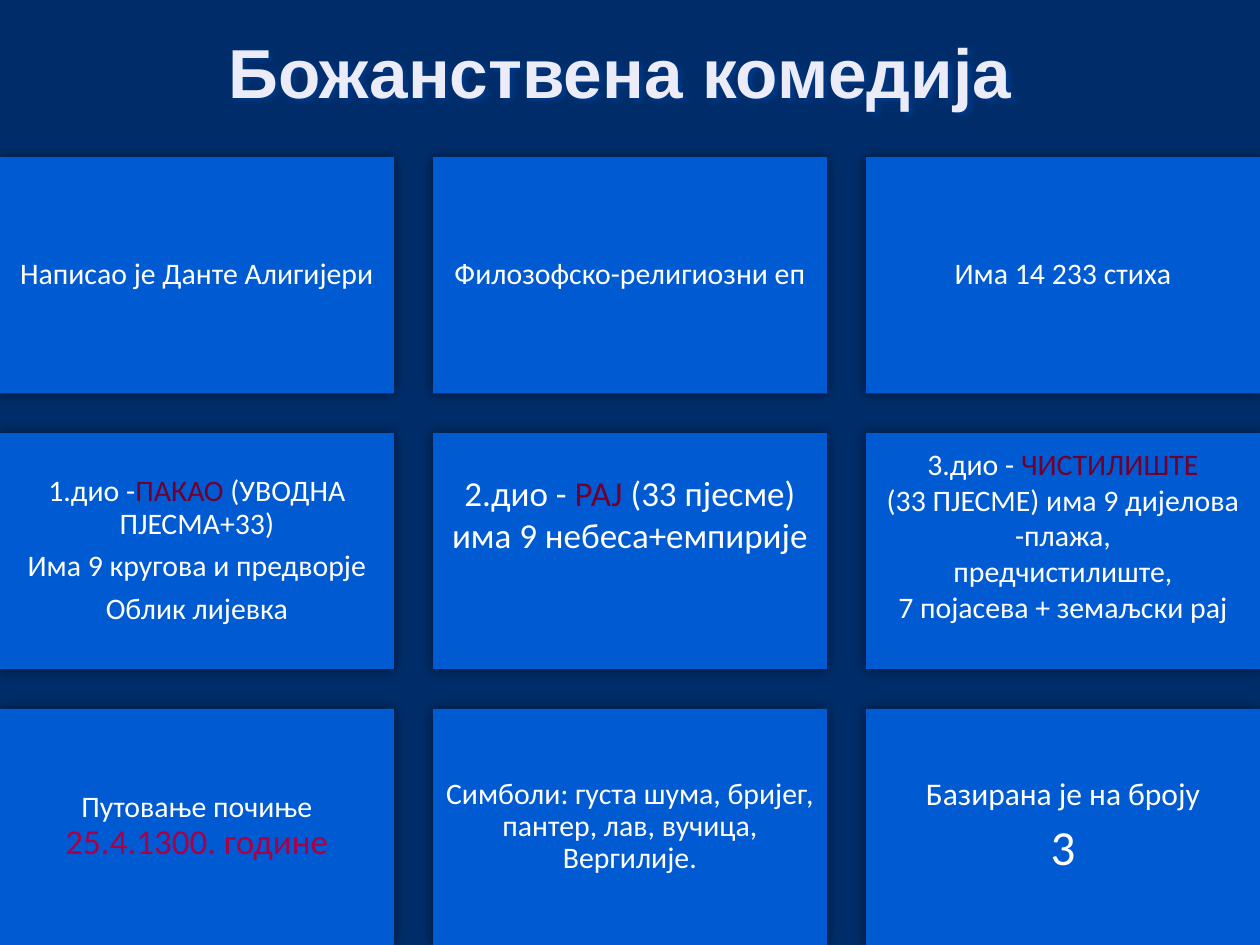
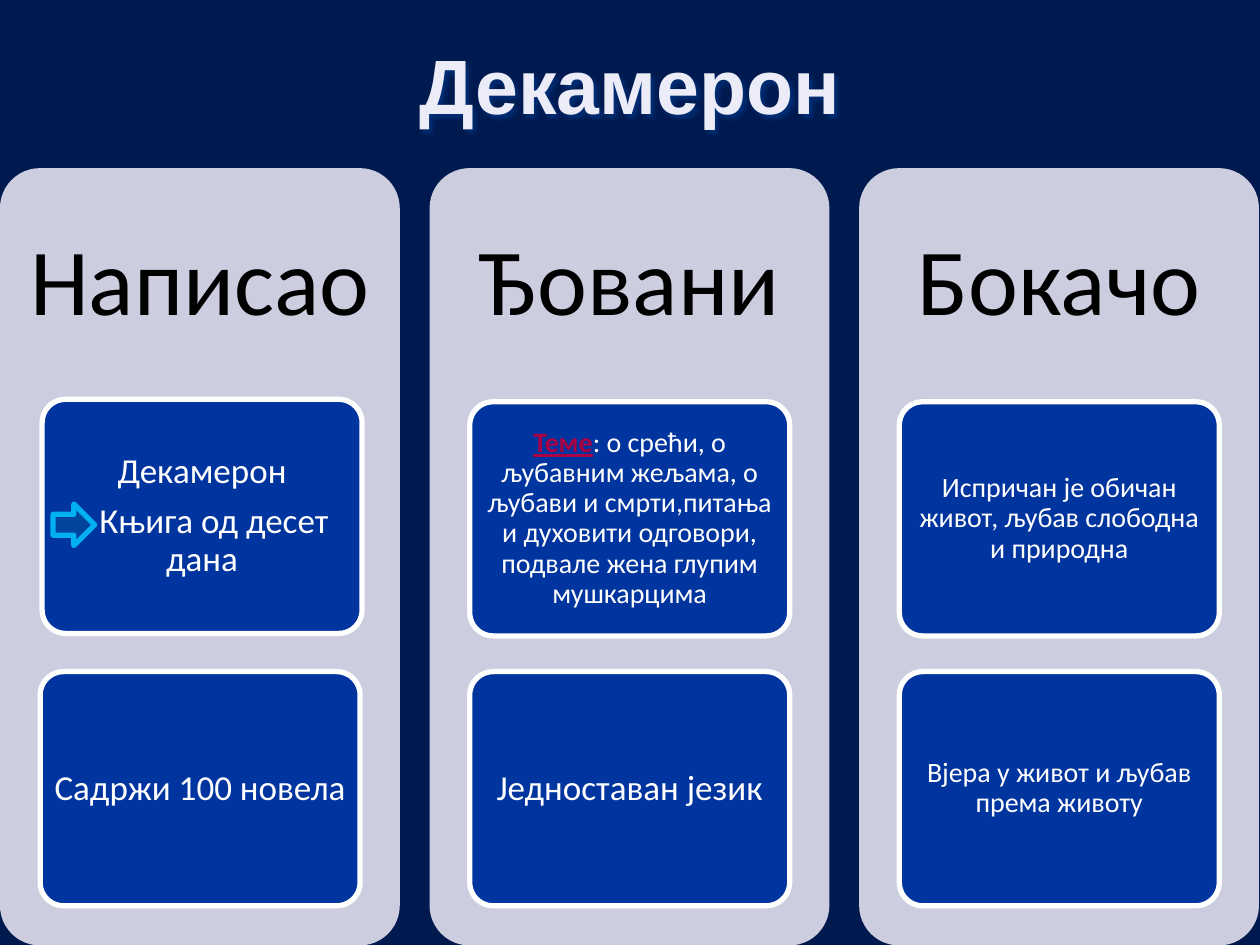
"""Build two slides on the Divine Comedy and the Decameron."""
from dataclasses import dataclass
from typing import NamedTuple, Optional

from lxml.etree import SubElement
from pptx import Presentation
from pptx.dml.color import RGBColor
from pptx.enum.shapes import MSO_SHAPE
from pptx.enum.text import MSO_ANCHOR, MSO_AUTO_SIZE, PP_ALIGN
from pptx.oxml.ns import qn
from pptx.util import Cm, Pt


@dataclass(frozen=True)
class Theme:
    comedy_bg: str = "002D6A"
    decameron_bg: str = "001A4F"
    title: str = "EBECF7"
    title_outline: str = "002675"
    title_shadow: str = "0043A0"
    card: str = "005BD3"
    panel: str = "CCCEDF"
    tile: str = "00349E"
    arrow: str = "00449E"
    arrow_line: str = "00B0F0"
    white: str = "FFFFFF"
    black: str = "000000"
    wine: str = "72002C"
    crimson: str = "AB0043"
    title_font: str = "Arial"
    body_font: str = "Calibri"
    comedy_title: float = 39.6
    decameron_title: float = 44
    heading: float = 54
    number: float = 28
    large: float = 20
    medium: float = 18
    normal: float = 17
    small: float = 16
    line: float = 3


class Bit(NamedTuple):
    text: str
    color: Optional[str] = None
    size: Optional[float] = None
    accent: bool = False


class Deck:
    def __init__(self, theme):
        self.theme = theme
        self.prs = Presentation()
        self.prs.slide_width, self.prs.slide_height = Cm(25.4), Cm(19.05)
        self.s = None

    def slide(self, bg):
        self.s = self.prs.slides.add_slide(self.prs.slide_layouts[5])
        fill = self.s.background.fill
        fill.solid()
        fill.fore_color.rgb = RGBColor.from_string(bg)

    def shadow(self, sp, color, blur, dist=0):
        sp.shadow.inherit = False
        effects = sp.element.spPr.find(qn("a:effectLst"))
        outer = SubElement(effects, qn("a:outerShdw"), blurRad=str(Pt(blur)),
                           dist=str(Pt(dist)), dir="2700000", rotWithShape="0")
        clr = SubElement(outer, qn("a:srgbClr"), val=color)
        SubElement(clr, qn("a:alpha"), val="50000")

    def title(self, text, left, top, height, size):
        sp = self.s.shapes.title
        sp.left, sp.top, sp.width, sp.height = Cm(left), Cm(top), Cm(22.86), Cm(height)
        tf = sp.text_frame
        tf.text = text
        tf.auto_size = MSO_AUTO_SIZE.NONE
        tf.vertical_anchor = MSO_ANCHOR.MIDDLE
        p = tf.paragraphs[0]
        p.alignment = PP_ALIGN.CENTER
        r = p.runs[0]
        self.font(r, self.theme.title_font, size, self.theme.title, bold=True)
        props = r._r.get_or_add_rPr()
        ln = SubElement(props, qn("a:ln"), w=str(Pt(2.48)))
        fill = SubElement(ln, qn("a:solidFill"))
        SubElement(fill, qn("a:srgbClr"), val=self.theme.title_outline)
        props.insert(0, ln)
        self.shadow(sp, self.theme.title_shadow, 3, 1.5)

    def font(self, r, name, size, color, bold=False, underline=False):
        f = r.font
        f.name, f.size, f.bold, f.underline = name, Pt(size), bold, underline
        f.color.rgb = RGBColor.from_string(color)

    def shape(self, kind, left, top, width, height, fill, line=None):
        sp = self.s.shapes.add_shape(kind, Cm(left), Cm(top), Cm(width), Cm(height))
        sp.shadow.inherit = False
        sp.fill.solid()
        sp.fill.fore_color.rgb = RGBColor.from_string(fill)
        if line:
            sp.line.color.rgb = RGBColor.from_string(line)
            sp.line.width = Pt(self.theme.line)
        else:
            sp.line.fill.background()
        if kind == MSO_SHAPE.ROUNDED_RECTANGLE:
            sp.adjustments[0] = 0.1
        return sp

    def text(self, sp, paragraphs, size, color, inset, bottom=0, tight=True):
        tf = sp.text_frame
        tf.word_wrap = True
        tf.vertical_anchor = MSO_ANCHOR.MIDDLE
        tf.margin_left = tf.margin_right = tf.margin_top = Cm(inset)
        tf.margin_bottom = Cm(inset + bottom)
        for i, bits in enumerate(paragraphs):
            p = tf.add_paragraph() if i else tf.paragraphs[0]
            p.alignment = PP_ALIGN.CENTER
            if tight:
                p.line_spacing = 0.9
                p.space_after = Pt(round(size * 0.35))
            for bit in bits:
                r = p.add_run()
                r.text = bit.text
                self.font(r, self.theme.body_font, bit.size or size,
                          bit.color or color, bit.accent, bit.accent)
        return tf

    def card(self, col, row, paragraphs, size, bottom=0, tight=True):
        sp = self.shape(MSO_SHAPE.RECTANGLE, col * 8.73, 3.17 + row * 5.56,
                        7.94, 4.76, self.theme.card)
        self.shadow(sp, self.theme.black, 7.5)
        self.text(sp, paragraphs, size, self.theme.white, 0.18, bottom, tight)

    def panel(self, col, heading):
        sp = self.shape(MSO_SHAPE.ROUNDED_RECTANGLE, col * 8.66, 3.39,
                        8.06, 15.67, self.theme.panel)
        self.text(sp, [[Bit(heading)]], self.theme.heading, self.theme.black, 0.35, 10.97)

    def tile(self, col, row, paragraphs, size, dx=0, dy=0):
        sp = self.shape(MSO_SHAPE.ROUNDED_RECTANGLE, col * 8.66 + 0.81 + dx,
                        8.1 + row * 5.44 + dy, 6.45, 4.72,
                        self.theme.tile, self.theme.white)
        return self.text(sp, paragraphs, size, self.theme.white, 0.12)


def comedy(deck):
    t = deck.theme
    deck.slide(t.comedy_bg)
    deck.title("Божанствена комедија", 1.07, 0.43, 1.98, t.comedy_title)
    cards = [
        ([[Bit("Написао је Данте Алигијери")]], t.normal),
        ([[Bit("Филозофско-религиозни еп")]], t.normal),
        ([[Bit("Има 14 233 стиха")]], t.normal),
        ([[Bit("1.дио -"), Bit("ПАКАО ", t.wine), Bit("(УВОДНА ПЈЕСМА+33)")],
          [Bit("Има 9 кругова и предворје")],
          [Bit("Облик лијевка")]], t.normal),
        ([[Bit("2.дио - "), Bit("РАЈ ", t.wine),
           Bit("(33 пјесме) има 9 небеса+емпирије")]], t.large, 1.5, False),
        ([[Bit("3.дио - "), Bit("ЧИСТИЛИШТЕ", t.wine)],
          [Bit("(33 ПЈЕСМЕ) има 9 дијелова")],
          [Bit("-плажа,")],
          [Bit("предчистилиште,")],
          [Bit("7 појасева + земаљски рај")]], t.normal, 0.65, False),
        ([[Bit("Путовање почиње "),
           Bit("25.4.1300. године", t.crimson, t.large)]], t.normal),
        ([[Bit("Симболи: густа шума, бријег, пантер, лав, вучица, Вергилије.")]], t.normal),
        ([[Bit("Базирана је на броју")], [Bit("3", size=t.number)]], t.medium),
    ]
    for i, card in enumerate(cards):
        deck.card(i % 3, i // 3, *card)


def decameron(deck):
    t = deck.theme
    deck.slide(t.decameron_bg)
    deck.title("Декамерон", 1.27, 0.64, 2.11, t.decameron_title)
    for col, heading in enumerate(["Написао", "Ђовани", "Бокачо"]):
        deck.panel(col, heading)
    tf = deck.tile(0, 0, [[Bit("Декамерон")], [Bit("Књига од десет дана")]],
                   t.large, 0.04, -0.05)
    tf.paragraphs[1]._p.get_or_add_pPr().set("indent", str(Cm(0.48)))
    deck.tile(0, 1, [[Bit("Садржи 100 новела")]], t.large)
    deck.tile(1, 0, [[Bit("Теме", t.crimson, accent=True),
                      Bit(": о срећи, о љубавним жељама, о љубави и смрти,питања "
                          "и духовити одговори, подвале жена глупим мушкарцима")]], t.small)
    deck.tile(1, 1, [[Bit("Једноставан језик")]], t.large)
    deck.tile(2, 0, [[Bit("Испричан је обичан живот, љубав слободна и природна")]], t.small)
    deck.tile(2, 1, [[Bit("Вјера у живот и љубав према животу")]], t.small)
    deck.shape(MSO_SHAPE.RIGHT_ARROW, 1.07, 10.16, 0.84, 0.84, t.arrow, t.arrow_line)


def main():
    deck = Deck(Theme())
    comedy(deck)
    decameron(deck)
    deck.prs.save("out.pptx")


if __name__ == "__main__":
    main()
